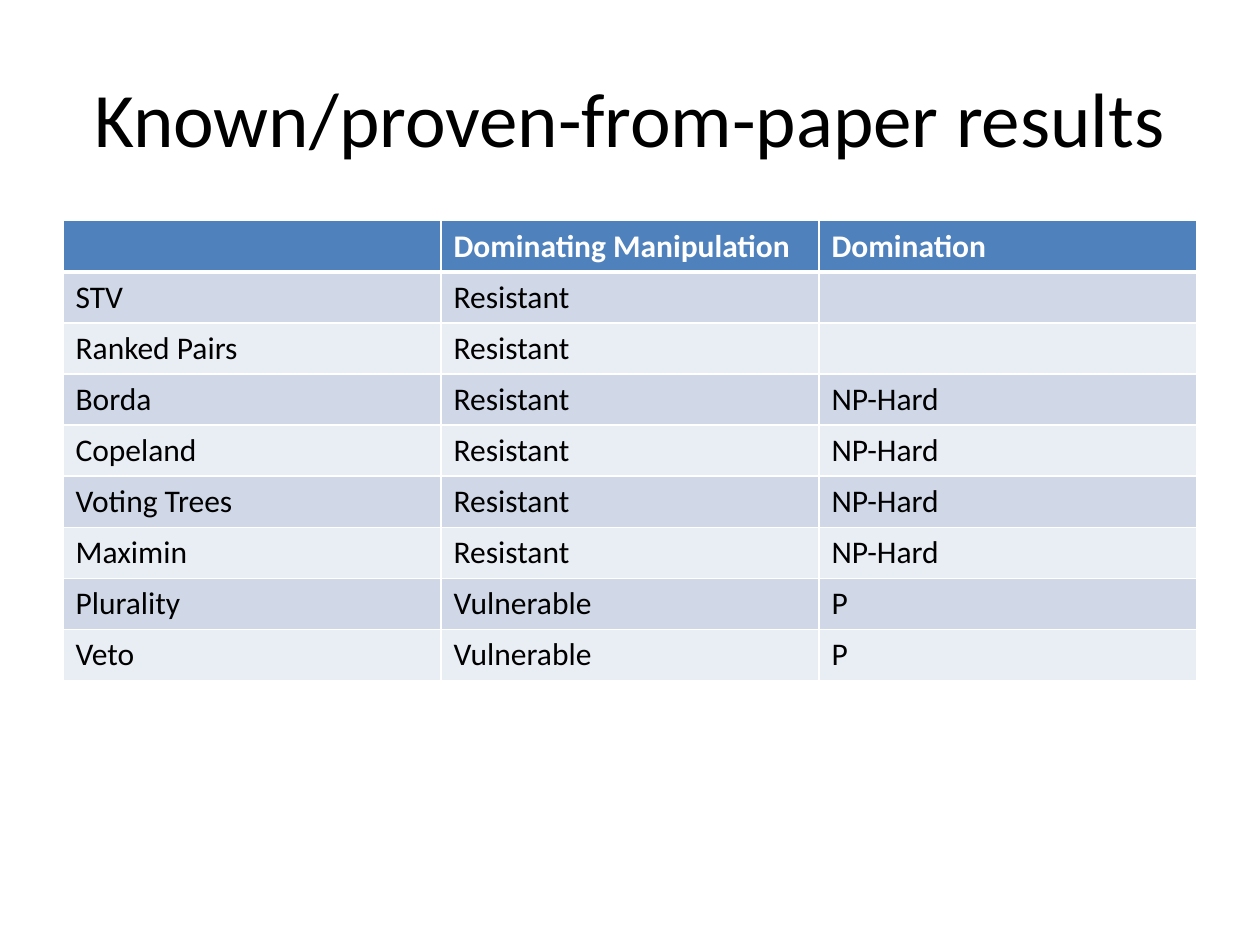
from dataclasses import dataclass

from lxml import etree
from pptx import Presentation
from pptx.dml.color import RGBColor
from pptx.enum import text
from pptx.oxml import ns
from pptx.util import Cm, Pt


@dataclass(frozen=True)
class Theme:
    font: str = "Calibri"
    black: str = "000000"
    white: str = "FFFFFF"
    head: str = "4F81BD"
    odd: str = "D0D8E8"
    even: str = "E9EDF4"
    title: int = 44
    body: int = 18
    thin: int = 1
    thick: int = 3


@dataclass(frozen=True)
class Rule:
    name: str
    manip: str
    domin: str = ""

    def cells(self) -> tuple[str, str, str]:
        return self.name, self.manip, self.domin


THEME = Theme()
RULES = [
    Rule("", "Dominating Manipulation", "Domination"),
    Rule("STV", "Resistant"),
    Rule("Ranked Pairs", "Resistant"),
    Rule("Borda", "Resistant", "NP-Hard"),
    Rule("Copeland", "Resistant", "NP-Hard"),
    Rule("Voting Trees", "Resistant", "NP-Hard"),
    Rule("Maximin", "Resistant", "NP-Hard"),
    Rule("Plurality", "Vulnerable", "P"),
    Rule("Veto", "Vulnerable", "P"),
]


def write(frame, words: str, *, size: int = THEME.body, color: str = THEME.black,
          bold: bool = False, align=text.PP_ALIGN.LEFT) -> None:
    para = frame.paragraphs[0]
    para.alignment = align
    para.font.size = Pt(size)
    if words:
        run = para.add_run()
        run.text = words
        font = run.font
        font.name, font.size, font.bold = THEME.font, Pt(size), bold
        font.color.rgb = RGBColor.from_string(color)


def edge(cell, side: str, width: int) -> None:
    props = cell._tc.get_or_add_tcPr()
    line = etree.SubElement(props, ns.qn(f"a:ln{side}"), w=str(Pt(width)))
    fill = etree.SubElement(line, ns.qn("a:solidFill"))
    etree.SubElement(fill, ns.qn("a:srgbClr"), val=THEME.white)


def paint(cell, words: str, row: int) -> None:
    head = row == 0
    for side in "LRTB":
        heavy = (row, side) in ((0, "B"), (1, "T"))
        edge(cell, side, THEME.thick if heavy else THEME.thin)
    cell.fill.solid()
    shade = THEME.head if head else (THEME.even, THEME.odd)[row % 2]
    cell.fill.fore_color.rgb = RGBColor.from_string(shade)
    write(cell.text_frame, words, bold=head,
          color=THEME.white if head else THEME.black)


def grid(slide, rules: list[Rule]) -> None:
    wide, high = Cm(7.62), Cm(1.03)
    table = slide.shapes.add_table(
        len(rules), 3, Cm(1.27), Cm(4.45), wide * 3, high * len(rules)).table
    for col in table.columns:
        col.width = wide
    for row, rule in enumerate(rules):
        table.rows[row].height = high
        for col, words in enumerate(rule.cells()):
            paint(table.cell(row, col), words, row)


def main() -> None:
    deck = Presentation()
    deck.slide_width, deck.slide_height = Cm(25.4), Cm(19.05)
    slide = deck.slides.add_slide(deck.slide_layouts[5])
    title = slide.shapes.title
    title.left, title.top = Cm(1.27), Cm(0.76)
    title.width, title.height = Cm(22.86), Cm(3.18)
    title.text_frame.vertical_anchor = text.MSO_ANCHOR.MIDDLE
    write(title.text_frame, "Known/proven-from-paper results",
          size=THEME.title, align=text.PP_ALIGN.CENTER)
    grid(slide, RULES)
    deck.save("out.pptx")


if __name__ == "__main__":
    main()
